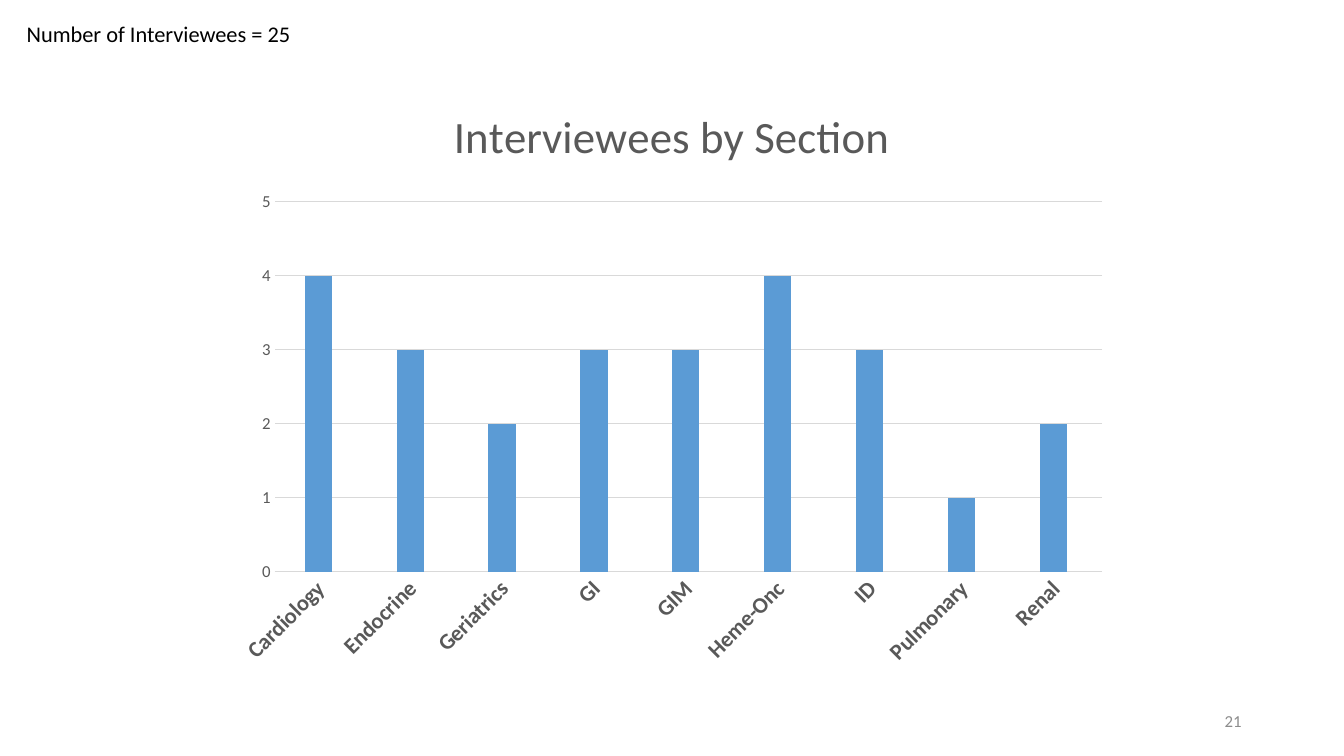
from pptx import Presentation
from pptx import util as u
from pptx.chart import data as chart_data
from pptx.dml.color import RGBColor
from pptx.enum import chart as charts, text

COLORS = {"ink": "000000", "label": "595959", "number": "8C8C8C", "grid": "D9D9D9",
          "bar1": "5B9BD5", "bar2": "ED7D31", "bar3": "A5A5A5"}
SECTIONS = {"Cardiology": 4, "Endocrine": 3, "Geriatrics": 2, "GI": 3, "GIM": 3,
            "Heme-Onc": 4, "ID": 3, "Pulmonary": 1, "Renal": 2}


class SlideBuilder:
    """Holds the font, the colours and the slide being built."""

    def __init__(self, prs, font="Calibri"):
        self.slide = prs.slides.add_slide(prs.slide_layouts[6])
        self.font_name = font

    def apply(self, target, values):
        for name, value in values.items():
            setattr(target, name, value)

    def color(self, name):
        return RGBColor.from_string(COLORS[name])

    def style(self, font, size, color, bold=False):
        self.apply(font, {"name": self.font_name, "size": u.Pt(size), "bold": bold})
        font.color.rgb = self.color(color)

    def line(self, line):
        line.color.rgb = self.color("grid")
        line.width = u.Pt(0.75)

    def text(self, words, box, size, color, **frame):
        sp = self.slide.shapes.add_textbox(*map(u.Pt, box))
        tf = sp.text_frame
        align = frame.pop("align", text.PP_ALIGN.LEFT)
        self.apply(tf, {"word_wrap": True, **frame})
        p = tf.paragraphs[0]
        p.alignment = align
        r = p.add_run()
        r.text = words
        self.style(r.font, size, color)

    def columns(self, title, values, box):
        data = chart_data.CategoryChartData()
        data.categories = list(values)
        data.add_series("Series 1", list(values.values()))
        for name in ("Series 2", "Series 3"):
            data.add_series(name, [None] * len(values))
        chart = self.slide.shapes.add_chart(
            charts.XL_CHART_TYPE.COLUMN_CLUSTERED, *map(u.Pt, box), data).chart
        self.style(chart.font, 10, "ink")
        self.apply(chart, {"has_legend": False, "has_title": True})
        chart.chart_title.include_in_layout = False
        r = chart.chart_title.text_frame.paragraphs[0].add_run()
        r.text = title
        self.style(r.font, 32, "label")

        plot = chart.plots[0]
        self.apply(plot, {"gap_width": 220, "overlap": 91, "vary_by_categories": False})
        for number, series in enumerate(plot.series, 1):
            series.format.fill.solid()
            series.format.fill.fore_color.rgb = self.color(f"bar{number}")
        self.axes(chart)

    def axes(self, chart):
        no_ticks = {"major_tick_mark": charts.XL_TICK_MARK.NONE,
                    "minor_tick_mark": charts.XL_TICK_MARK.NONE}
        cat, val = chart.category_axis, chart.value_axis
        self.apply(cat, no_ticks)
        self.apply(val, {**no_ticks, "minimum_scale": 0, "maximum_scale": 5,
                         "major_unit": 1, "has_major_gridlines": True})
        self.style(cat.tick_labels.font, 16, "label", bold=True)
        self.style(val.tick_labels.font, 12, "label")
        self.line(cat.format.line)
        self.line(val.major_gridlines.format.line)
        val.format.line.fill.background()


def main():
    prs = Presentation()
    prs.slide_width, prs.slide_height = u.Pt(960), u.Pt(540)
    s = SlideBuilder(prs)
    s.columns("Interviewees by Section", SECTIONS, (160, 57, 640, 427))
    s.text("Number of Interviewees = 25", (12, 11, 229, 26.6), 16, "ink",
           auto_size=text.MSO_AUTO_SIZE.SHAPE_TO_FIT_TEXT)
    s.text("21", (678, 500.5, 216, 28.75), 12, "number",
           align=text.PP_ALIGN.RIGHT, vertical_anchor=text.MSO_ANCHOR.MIDDLE)
    prs.save("out.pptx")


if __name__ == "__main__":
    main()
